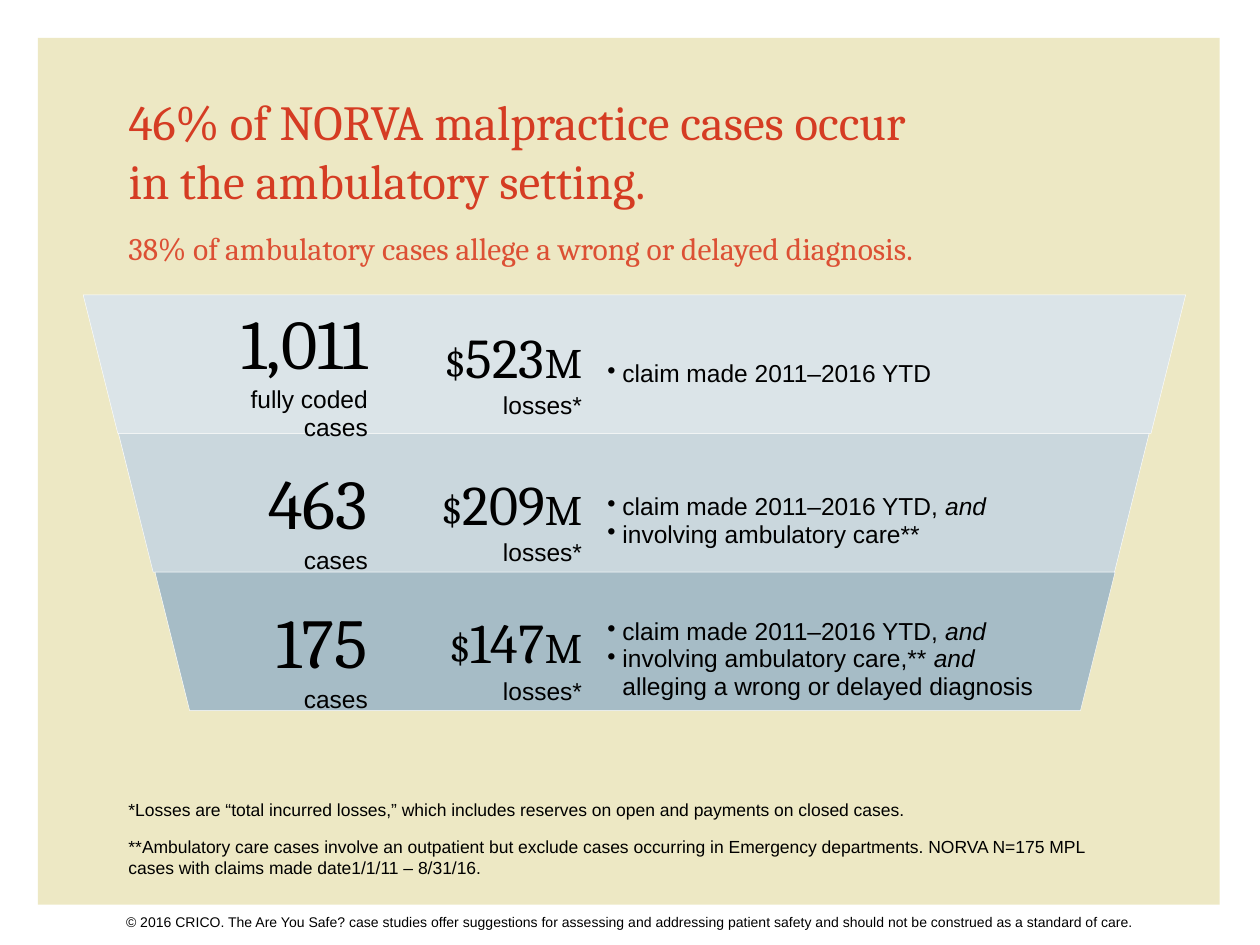
from lxml import etree
from pptx import Presentation
from pptx.dml.color import RGBColor
from pptx.enum.shapes import MSO_SHAPE
from pptx.enum.text import MSO_ANCHOR, PP_ALIGN
from pptx.oxml.ns import qn
from pptx.util import Inches, Pt

RECTANGLE, TRAPEZOID = MSO_SHAPE.RECTANGLE, MSO_SHAPE.TRAPEZOID
TOP, MIDDLE, BOTTOM = MSO_ANCHOR.TOP, MSO_ANCHOR.MIDDLE, MSO_ANCHOR.BOTTOM
LEFT, RIGHT = PP_ALIGN.LEFT, PP_ALIGN.RIGHT
NO_GRID_STYLE = "{2D5ABB26-0587-4C30-8999-92F81FD0307C}"
SERIF, SANS = "Cambria", "Arial"
COLORS = {
    "panel": "EDE8C4",
    "band_top": "DBE4E8",
    "band_middle": "CAD7DD",
    "band_bottom": "A6BCC6",
    "band_line": "FFFFFF",
    "title": "D53C23",
    "subtitle": "DC5034",
    "text": "000000",
}
ROW_HEIGHT = 1.1


class SlideBuilder:
    def __init__(self, slide):
        self.slide = slide

    def color(self, name):
        return RGBColor.from_string(COLORS[name])

    def style(self, font, size, name=SANS, color="text"):
        font.size, font.name = Pt(size), name
        font.color.rgb = self.color(color)

    def shape(self, kind, box, fill, line=None, rotation=0):
        shape = self.slide.shapes.add_shape(kind, *map(Inches, box))
        shape.shadow.inherit = False
        shape.rotation = rotation
        shape.fill.solid()
        shape.fill.fore_color.rgb = self.color(fill)
        if line:
            shape.line.color.rgb = self.color(line)
            shape.line.width = Pt(0.25)
        else:
            shape.line.fill.background()

    def text(self, box, paragraphs, size, name=SANS, color="text",
             anchor=TOP, insets=(0.04, 0.04), gap=0):
        """Each paragraph is a string; a newline in it is a line break."""
        frame = self.slide.shapes.add_textbox(*map(Inches, box)).text_frame
        frame.word_wrap = True
        frame.vertical_anchor = anchor
        frame.margin_left = frame.margin_right = Inches(insets[0])
        frame.margin_top = frame.margin_bottom = Inches(insets[1])
        for index, content in enumerate(paragraphs):
            paragraph = frame.add_paragraph() if index else frame.paragraphs[0]
            if index:
                paragraph.space_before = Pt(6)
            paragraph.space_after = Pt(gap)
            self.runs(paragraph, [(content, size, name, False)], color)

    def runs(self, paragraph, runs, color="text"):
        for content, size, name, italic in runs:
            for index, line in enumerate(content.split("\n")):
                if index:
                    paragraph.add_line_break()
                if line:
                    run = paragraph.add_run()
                    run.text = line
                    self.style(run.font, size, name, color)
                    run.font.italic = italic

    def bullet(self, paragraph):
        properties = paragraph._p.get_or_add_pPr()
        properties.set("marL", str(Inches(0.12)))
        properties.set("indent", str(-Inches(0.12)))
        etree.SubElement(properties, qn("a:buChar"), char="•")

    def cell(self, cell, paragraphs, alignment=LEFT, bulleted=False):
        cell.vertical_anchor = MIDDLE
        frame = cell.text_frame
        for index, runs in enumerate(paragraphs):
            paragraph = frame.add_paragraph() if index else frame.paragraphs[0]
            paragraph.alignment = alignment
            if bulleted:
                self.bullet(paragraph)
            self.runs(paragraph, runs)

    def table(self, left, top, widths, heights):
        table = self.slide.shapes.add_table(
            len(heights), len(widths), Inches(left), Inches(top),
            Inches(sum(widths)), Inches(sum(heights))).table
        table.first_row = table.horz_banding = False
        table._tbl.tblPr.find(qn("a:tableStyleId")).text = NO_GRID_STYLE
        for column, width in zip(table.columns, widths):
            column.width = Inches(width)
        for row, height in zip(table.rows, heights):
            row.height = Inches(height)
        for cell in table.iter_cells():
            cell.fill.background()
        return table


def plain(content):
    return (content, 14, SANS, False)


def italic(content):
    return (content, 14, SANS, True)


def main():
    presentation = Presentation()
    presentation.slide_width, presentation.slide_height = Inches(10), Inches(7.5)
    slide = presentation.slides.add_slide(presentation.slide_layouts[6])
    builder = SlideBuilder(slide)

    builder.shape(RECTANGLE, (0.3, 0.3, 9.38, 6.88), "panel")
    bands = [(0.66, 8.75, "band_top"), (0.94, 8.18, "band_middle"),
             (1.23, 7.62, "band_bottom")]
    for index, (left, width, fill) in enumerate(bands):
        box = (left, 2.34 + index * ROW_HEIGHT, width, ROW_HEIGHT)
        builder.shape(TRAPEZOID, box, fill, "band_line", 180)

    builder.text((0.98, 0.8, 8.05, 0.9),
                 ["46% of NORVA malpractice cases occur\nin the ambulatory setting."],
                 28, SERIF, "title", BOTTOM)
    builder.text((0.98, 1.78, 8.03, 0.43),
                 ["38% of ambulatory cases allege a wrong or delayed diagnosis."],
                 18, SERIF, "subtitle", gap=3)
    builder.text((0.98, 6.74, 8.03, 0.27), [
        "*Losses are “total incurred losses,” which includes reserves on open "
        "and payments on closed cases.",
        "**Ambulatory care cases involve an outpatient but exclude cases occurring "
        "in Emergency departments. NORVA N=175 MPL cases with claims made "
        "date1/1/11 – 8/31/16.",
    ], 10, anchor=BOTTOM, gap=3)

    claim = "claim made 2011–2016 YTD"
    rows = [
        ("1,011", "fully coded cases", "523", [[plain(claim)]]),
        ("463", "cases", "209", [
            [plain(claim + ", "), italic("and")],
            [plain("involving ambulatory care**")]]),
        ("175", "cases", "147", [
            [plain(claim + ", "), italic("and")],
            [plain("involving ambulatory care,** "), italic("and\n"),
             plain("alleging a wrong or delayed diagnosis")]]),
    ]
    table = builder.table(1.59, 2.35, [1.43, 1.7, 5.1], [ROW_HEIGHT] * 3 + [0.54])
    for index, (count, unit, losses, criteria) in enumerate(rows):
        builder.cell(table.cell(index, 0),
                     [[(count, 40, SERIF, False)], [plain(unit)]], RIGHT)
        builder.cell(table.cell(index, 1),
                     [[("$", 24, SERIF, False), (losses, 32, SERIF, False),
                       ("M\n", 24, SERIF, False), plain("losses*")]], RIGHT)
        builder.cell(table.cell(index, 2), criteria, bulleted=True)

    builder.text((1, 7.2, 8.49, 0.27),
                 ["© 2016 CRICO. The Are You Safe? case studies offer suggestions for "
                  "assessing and addressing patient safety and should not be construed "
                  "as a standard of care."], 8, insets=(0, 0.05))
    presentation.save("out.pptx")


if __name__ == "__main__":
    main()
